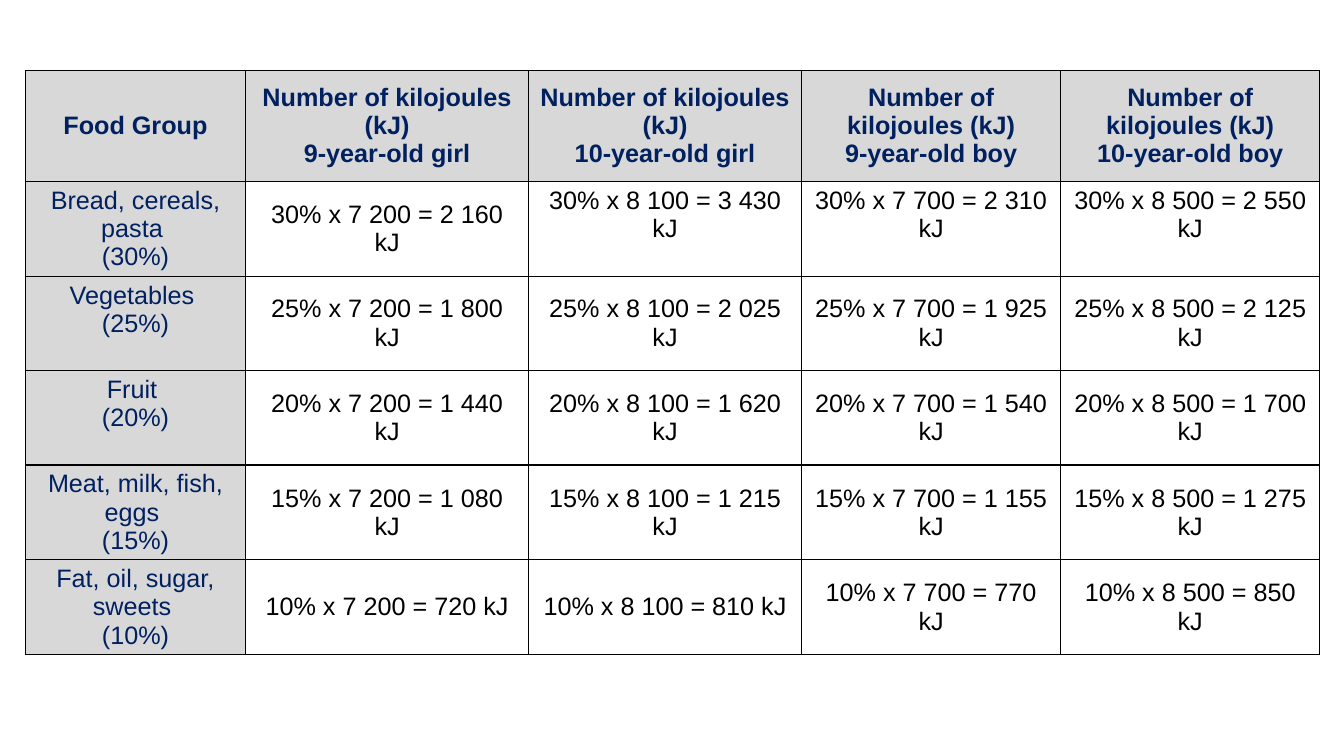
"""Build a slide with a table of kilojoules per food group for four children."""
from lxml.etree import SubElement
from pptx import Presentation
from pptx.dml.color import RGBColor
from pptx.enum.text import MSO_ANCHOR, PP_ALIGN
from pptx.oxml.ns import qn
from pptx.util import Cm, Pt

KIDS = [
    ("9-year-old girl", "7 200"),
    ("10-year-old girl", "8 100"),
    ("9-year-old boy", "7 700"),
    ("10-year-old boy", "8 500"),
]
GROUPS = [
    ("Bread, cereals, pasta ", "30%", ["2 160", "3 430", "2 310", "2 550"]),
    ("Vegetables ", "25%", ["1 800", "2 025", "1 925", "2 125"]),
    ("Fruit ", "20%", ["1 440", "1 620", "1 540", "1 700"]),
    ("Meat, milk, fish, eggs ", "15%", ["1 080", "1 215", "1 155", "1 275"]),
    ("Fat, oil, sugar, sweets ", "10%", ["720", "810", "770", "850"]),
]
TOP_CELLS = {(1, 2), (1, 3), (1, 4), (2, 0), (3, 0)}
WIDTHS = [5.55, 7.13, 6.88, 6.53, 6.53]
HEIGHTS = [2.79] + [2.38] * len(GROUPS)
LEFT, TOP = 0.64, 1.78
NAVY, BLACK, GREY, WHITE = "002060", "000000", "D8D8D8", "FFFFFF"


def tint(fill, color):
    fill.solid()
    fill.fore_color.rgb = RGBColor.from_string(color)


def frame(cell):
    props = cell._tc.get_or_add_tcPr()
    for side in ("a:lnL", "a:lnR", "a:lnT", "a:lnB"):
        line = SubElement(props, qn(side), w=str(Pt(1)))
        solid = SubElement(line, qn("a:solidFill"))
        SubElement(solid, qn("a:srgbClr"), val=BLACK)


def write(cell, lines, color, bold):
    text = cell.text_frame
    for i, line in enumerate(lines):
        para = text.add_paragraph() if i else text.paragraphs[0]
        para.alignment = PP_ALIGN.CENTER
        run = para.add_run()
        run.text = line
        run.font.name = "Arial"
        run.font.size = Pt(18)
        run.font.bold = bold
        tint(run.font.fill, color)


def main():
    rows = [[["Food Group"]] + [["Number of kilojoules (kJ)", kid] for kid, _ in KIDS]]
    for name, share, sums in GROUPS:
        cells = [[f"{share} x {need} = {total} kJ"] for (_, need), total in zip(KIDS, sums)]
        rows.append([[name, f"({share})"]] + cells)

    deck = Presentation()
    deck.slide_width, deck.slide_height = Cm(33.87), Cm(19.05)
    slide = deck.slides.add_slide(deck.slide_layouts[6])
    table = slide.shapes.add_table(
        len(rows), len(WIDTHS), Cm(LEFT), Cm(TOP), Cm(sum(WIDTHS)), Cm(sum(HEIGHTS))
    ).table
    table.horz_banding = False
    for col, width in zip(table.columns, WIDTHS):
        col.width = Cm(width)
    for row, height in zip(table.rows, HEIGHTS):
        row.height = Cm(height)

    for r, row in enumerate(rows):
        for c, lines in enumerate(row):
            cell = table.cell(r, c)
            head = r == 0 or c == 0
            frame(cell)
            tint(cell.fill, GREY if head else WHITE)
            high = (r, c) in TOP_CELLS
            cell.vertical_anchor = MSO_ANCHOR.TOP if high else MSO_ANCHOR.MIDDLE
            write(cell, lines, NAVY if head else BLACK, r == 0)
    deck.save("out.pptx")


if __name__ == "__main__":
    main()
